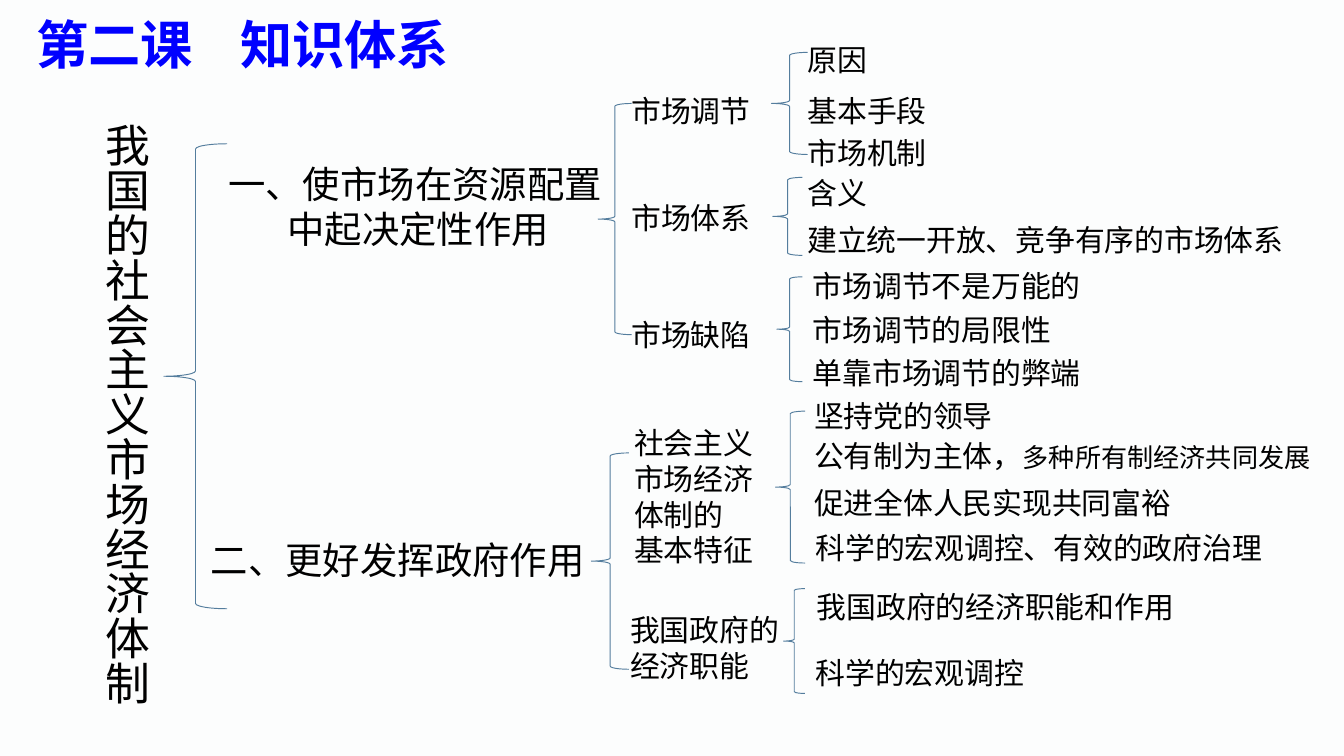
from lxml import etree
from pptx import Presentation
from pptx import util as u
from pptx.dml.color import RGBColor
from pptx.enum import shapes, text
from pptx.oxml import ns

PX = 9144
BACK = RGBColor(0xFC, 0xFD, 0xFD)
BLUE = RGBColor(0x00, 0x00, 0xFF)
BLACK = RGBColor(0x00, 0x00, 0x00)
BRACE = RGBColor(0x54, 0x7D, 0x9D)
CJK = "Noto Sans CJK SC"

TOPICS = (
    ((122, 107, 47, 346), 20, (
        (38, 8, 300, 77, ("一、使市场在资源配置", "中起决定性作用")),
        (25, 288, 301, 44, ("二、更好发挥政府作用",)),
    )),
    ((445, 77, 25, 172), 16, (
        (15, -13, 120, 37, ("市场调节",)),
        (15, 67, 118, 37, ("市场体系",)),
        (15, 154, 112, 37, ("市场缺陷",)),
    )),
    ((440, 337, 28, 161), 16, (
        (22, -26, 114, 118, ("社会主义", "市场经济", "体制的", "基本特征")),
        (19, 113, 141, 64, ("我国政府的经济职能",)),
    )),
    ((574, 39, 27, 76), 16, (
        (17, -13, 371, 37, ("原因",)),
        (17, 25, 351, 37, ("基本手段",)),
        (17, 56, 351, 37, ("市场机制",)),
    )),
    ((575, 132, 22, 58), 16, (
        (16, -7, 65, 37, ("含义",)),
        (16, 28, 394, 37, ("建立统一开放、竞争有序的市场体系",)),
    )),
    ((578, 206, 19, 78), 16, (
        (17, -12, 236, 37, ("市场调节不是万能的",)),
        (17, 21, 224, 37, ("市场调节的局限性",)),
        (17, 53, 242, 37, ("单靠市场调节的弊端",)),
    )),
    ((577, 306, 22, 113), 16, (
        (19, -15, 334, 37, ("坚持党的领导",)),
        (19, 15, 394, 37, ((("公有制为主体，", 16), ("多种所有制经济共同发展", 14)),)),
        (19, 50, 334, 37, ("促进全体人民实现共同富裕",)),
        (20, 83, 365, 37, ("科学的宏观调控、有效的政府治理",)),
    )),
    ((583, 438, 16, 78), 16, (
        (15, -5, 363, 37, ("我国政府的经济职能和作用",)),
        (14, 44, 311, 37, ("科学的宏观调控",)),
    )),
)


def px(*lengths):
    """Turn px lengths into EMU."""
    return [u.Emu(n * PX) for n in lengths]


def add_run(p, words, size, color=BLACK, font="Arial", bold=False):
    """Add one styled run to a paragraph."""
    r = p.add_run()
    r.text = words
    r.font.size = u.Pt(size)
    r.font.bold = bold
    r.font.color.rgb = color
    r.font.name = font
    etree.SubElement(r.font._element, ns.qn("a:ea"), typeface=CJK)


def add_box(s, box):
    """Add an empty wrapping text box and return its frame."""
    tf = s.shapes.add_textbox(*px(*box)).text_frame
    tf.word_wrap = True
    tf.auto_size = text.MSO_AUTO_SIZE.SHAPE_TO_FIT_TEXT
    return tf


def add_label(s, box, lines, size):
    """Write one paragraph per line, each a string or a series of sized runs."""
    tf = add_box(s, box)
    for i, line in enumerate(lines):
        p = tf.paragraphs[0] if i == 0 else tf.add_paragraph()
        for words, points in ((line, size),) if isinstance(line, str) else line:
            add_run(p, words, points)
    return tf


def add_title(s, box):
    """Write the lesson title with a tab between its two parts."""
    p = add_box(s, box).paragraphs[0]
    tabs = etree.SubElement(p._p.get_or_add_pPr(), ns.qn("a:tabLst"))
    etree.SubElement(tabs, ns.qn("a:tab"), pos=str(152 * PX), algn="l")
    add_run(p, "第二课\t知识体系", 28, BLUE, CJK, True)


def add_root(s, box):
    """Write the vertical root topic."""
    tf = add_label(s, box, ("我国的社会主义市场经济体制",), 24)
    tf._txBody.bodyPr.set("vert", "eaVert")


def add_branch(s, box, size, labels):
    """Draw a brace and place its labels relative to the brace's corner."""
    x, y, w, h = box
    sp = s.shapes.add_shape(shapes.MSO_SHAPE.LEFT_BRACE, *px(x, y, w, h))
    sp.shadow.inherit = False
    sp.fill.background()
    sp.line.color.rgb = BRACE
    sp.line.width = u.Pt(0.5)
    for dx, dy, width, height, lines in labels:
        tf = add_label(s, (x + dx, y + dy, width, height), lines, size)
        if size == 20:
            for p in tf.paragraphs[1:]:
                p._p.get_or_add_pPr().set("marL", str(44 * PX))


def main():
    """Build and save the knowledge map."""
    prs = Presentation()
    prs.slide_width = u.Emu(1000 * PX)
    prs.slide_height = u.Emu(prs.slide_width * 9 // 16)
    s = prs.slides.add_slide(prs.slide_layouts[6])
    s.background.fill.solid()
    s.background.fill.fore_color.rgb = BACK
    add_title(s, (17, 4, 498, 57))
    add_root(s, (58, 82, 61, 459))
    for box, size, labels in TOPICS:
        add_branch(s, box, size, labels)
    prs.save("out.pptx")


if __name__ == "__main__":
    main()
